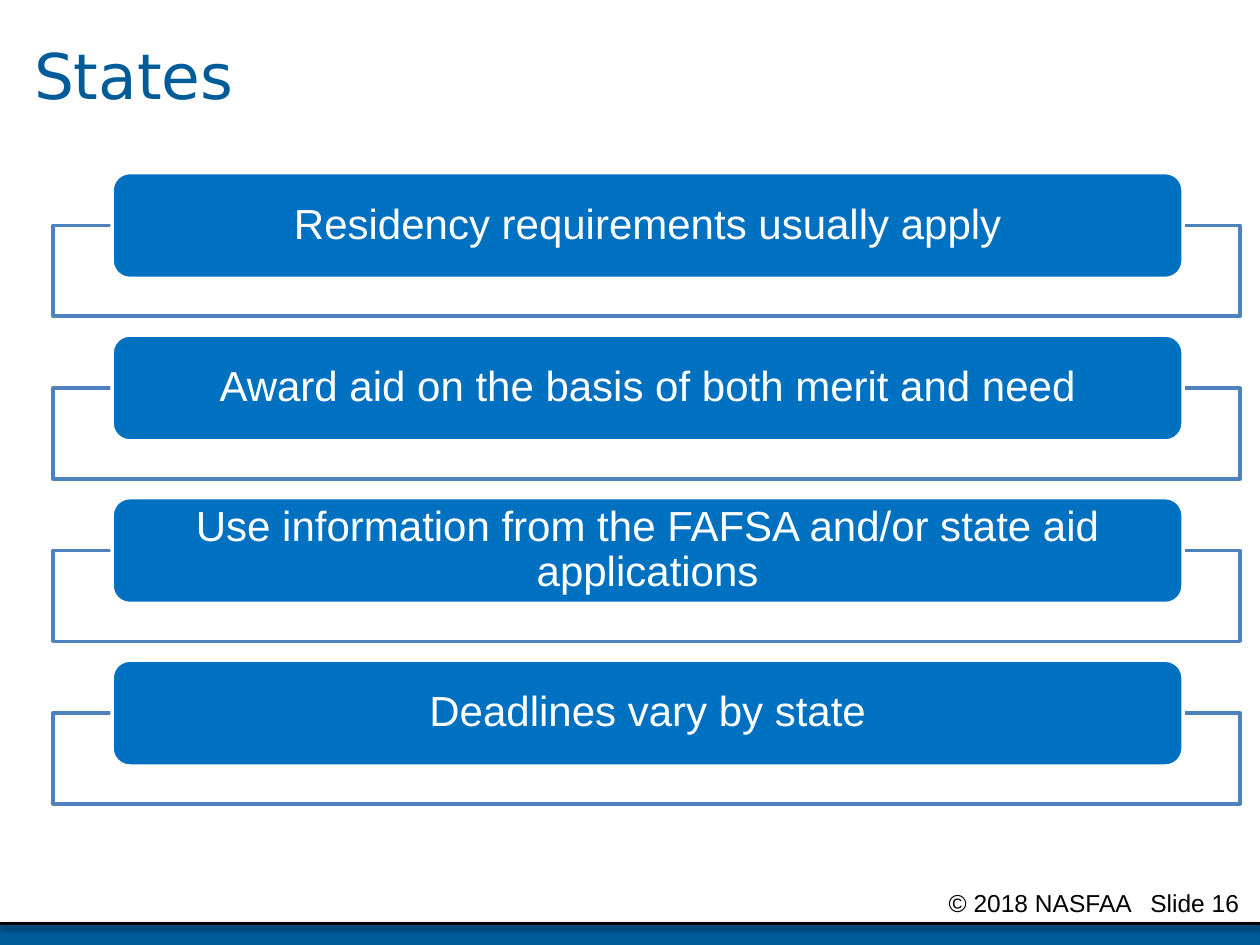
from lxml import etree
from pptx import Presentation
from pptx import util as u
from pptx.dml.color import RGBColor
from pptx.enum import shapes, text
from pptx.oxml import parse_xml
from pptx.oxml.ns import nsdecls, qn

COLUMNS, ROWS = 100, 75
POINTS = [
    "Residency requirements usually apply",
    "Award aid on the basis of both merit and need",
    "Use information from the FAFSA and/or state aid applications",
    "Deadlines vary by state",
]


def colour(value):
    return RGBColor.from_string(value)


class Page:
    """Holds the style and the current slide; lengths are grid columns and rows."""

    navy, blue, outline = "005B99", "0070C0", "4F81BD"
    white, black = "FFFFFF", "000000"
    body_font, title_font = "Arial", "DejaVu Sans"

    def __init__(self, deck):
        self.column = deck.slide_width / COLUMNS
        self.row = deck.slide_height / ROWS
        self.slide = deck.slides.add_slide(deck.slide_layouts[5])

    def place(self, left, top, width, height):
        return (round(left * self.column), round(top * self.row),
                round(width * self.column), round(height * self.row))

    def set_words(self, box, words, size, font, ink, align, inset=0.1):
        frame = box.text_frame
        frame.text = words
        frame.word_wrap = True
        frame.auto_size = text.MSO_AUTO_SIZE.NONE
        frame.vertical_anchor = text.MSO_ANCHOR.MIDDLE
        frame.margin_left = frame.margin_right = u.Inches(inset)
        frame.margin_top = frame.margin_bottom = 0
        para = frame.paragraphs[0]
        para.alignment = align
        para.line_spacing = 0.9
        for span in para.runs:
            span.font.size = u.Pt(size)
            span.font.name = font
            span.font.color.rgb = colour(ink)

    def title(self, words, area):
        box = self.slide.shapes.title
        box.left, box.top, box.width, box.height = self.place(*area)
        self.set_words(box, words, 36, self.title_font, self.navy,
                       text.PP_ALIGN.LEFT)

    def block(self, kind, area, fill, line=None, opacity=None):
        box = self.slide.shapes.add_shape(kind, *self.place(*area))
        box.shadow.inherit = False
        box.fill.solid()
        box.fill.fore_color.rgb = colour(fill)
        if opacity:
            tint = box._element.spPr.find(qn("a:solidFill")).find(qn("a:srgbClr"))
            etree.SubElement(tint, qn("a:alpha"), val=str(opacity * 1000))
        if line:
            box.line.color.rgb = colour(line)
            box.line.width = u.Pt(2)
        else:
            box.line.fill.background()
        return box

    def list_item(self, words, top):
        """A rounded label lying over the top edge of an outlined frame."""
        self.block(shapes.MSO_SHAPE.RECTANGLE, (4.2, top + 4.2, 94.2, 7.2),
                   self.white, self.outline, opacity=90)
        label = self.block(shapes.MSO_SHAPE.ROUNDED_RECTANGLE,
                           (8.9, top, 85, 8.4), self.blue, self.white)
        self.set_words(label, words, 24, self.body_font, self.white,
                       text.PP_ALIGN.CENTER, inset=0.29)

    def shadowed_rule(self, top):
        left, y, width, _ = self.place(0, top, COLUMNS, 0)
        rule = self.slide.shapes.add_connector(
            shapes.MSO_CONNECTOR.STRAIGHT, left, y, left + width, y)
        rule.line.color.rgb = colour(self.black)
        rule.line.width = u.Pt(2)
        rule._element.spPr.append(parse_xml(
            f'<a:effectLst {nsdecls("a")}>'
            f'<a:outerShdw blurRad="{u.Pt(3.1)}" dist="{u.Pt(1.6)}" dir="5400000">'
            f'<a:srgbClr val="{self.black}"><a:alpha val="38000"/></a:srgbClr>'
            '</a:outerShdw></a:effectLst>'))

    def footer(self, owner, number, area, tab):
        box = self.slide.shapes.add_textbox(*self.place(*area))
        self.set_words(box, f"{owner}\t{number}", 14, self.body_font, self.black,
                       text.PP_ALIGN.LEFT, inset=0)
        props = box.text_frame.paragraphs[0]._p.get_or_add_pPr()
        tabs = etree.SubElement(props, qn("a:tabLst"))
        etree.SubElement(tabs, qn("a:tab"), pos=str(round(tab * self.column)), algn="l")


def main():
    deck = Presentation()
    deck.slide_width, deck.slide_height = u.Inches(10), u.Inches(7.5)
    page = Page(deck)
    page.block(shapes.MSO_SHAPE.RECTANGLE, (0, 73.3, COLUMNS, 2), page.navy)
    page.shadowed_rule(73.3)
    page.footer("© 2018 NASFAA", "Slide 16", (75.3, 70.5, 24.7, 2.5), tab=16)
    for index, words in enumerate(POINTS):
        page.list_item(words, 13.7 + 12.9 * index)
    page.title("States", (1.7, 0, 96.7, 12.5))
    deck.save("out.pptx")


if __name__ == "__main__":
    main()
